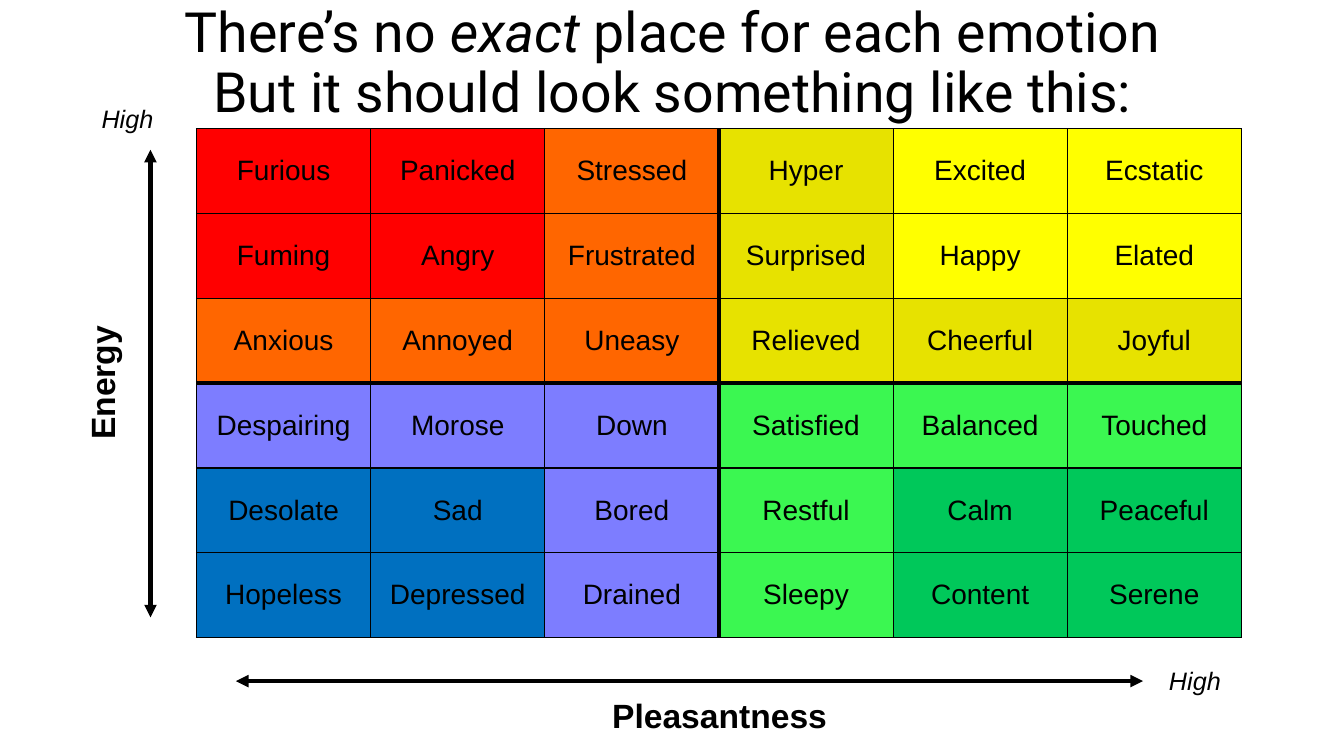
from lxml import etree
from pptx import Presentation
from pptx.dml.color import RGBColor
from pptx.enum.shapes import MSO_CONNECTOR
from pptx.enum.text import MSO_ANCHOR, MSO_AUTO_SIZE, PP_ALIGN
from pptx.oxml.ns import qn
from pptx.util import Pt

STRAIGHT = MSO_CONNECTOR.STRAIGHT
MIDDLE = MSO_ANCHOR.MIDDLE
NO_AUTOFIT = MSO_AUTO_SIZE.NONE
CENTER = PP_ALIGN.CENTER

BLACK = "000000"
EMOTIONS = [
    ["Furious", "Panicked", "Stressed", "Hyper", "Excited", "Ecstatic"],
    ["Fuming", "Angry", "Frustrated", "Surprised", "Happy", "Elated"],
    ["Anxious", "Annoyed", "Uneasy", "Relieved", "Cheerful", "Joyful"],
    ["Despairing", "Morose", "Down", "Satisfied", "Balanced", "Touched"],
    ["Desolate", "Sad", "Bored", "Restful", "Calm", "Peaceful"],
    ["Hopeless", "Depressed", "Drained", "Sleepy", "Content", "Serene"],
]
STRONG = [["FF0000", "FFFF00"], ["0070C0", "00C85A"]]
MILD = [["FF6600", "E7E200"], ["7D7DFF", "3BF751"]]
CENTRAL = (2, 3)


def color(value):
    return RGBColor.from_string(value)


def write(frame, text, size=20, font="Arial", bold=False, italic=False):
    paragraph = frame.paragraphs[0]
    paragraph.alignment = CENTER
    run = paragraph.add_run()
    run.text = text
    run.font.size = Pt(size)
    run.font.name = font
    run.font.bold = bold
    run.font.italic = italic
    run.font.color.rgb = color(BLACK)


prs = Presentation()
prs.slide_width, prs.slide_height = Pt(960), Pt(540)
slide = prs.slides.add_slide(prs.slide_layouts[5])

title = slide.shapes.title
title.left, title.top, title.width, title.height = Pt(29), Pt(0), Pt(903), Pt(92)
heading = title.text_frame
heading.auto_size = NO_AUTOFIT
heading.vertical_anchor = MIDDLE
heading.paragraphs[0].line_spacing = 0.9
for text, italic in [("There’s no ", False), ("exact", True), (" place for each emotion", False)]:
    write(heading, text, size=39.6, font="Roboto", italic=italic)
heading.paragraphs[0].add_line_break()
write(heading, "But it should look something like this:", size=39.6, font="Roboto")

mood_meter = slide.shapes.add_table(6, 6, Pt(140.4), Pt(92), Pt(746.4), Pt(363.6)).table
mood_meter.first_row = False
mood_meter.horz_banding = False
for column in mood_meter.columns:
    column.width = Pt(124.4)
for row in mood_meter.rows:
    row.height = Pt(60.6)

for r, emotions in enumerate(EMOTIONS):
    for c, emotion in enumerate(emotions):
        cell = mood_meter.cell(r, c)
        cell.margin_left = cell.margin_right = Pt(5)
        cell.margin_top = cell.margin_bottom = Pt(0)
        cell.vertical_anchor = MIDDLE
        write(cell.text_frame, emotion)
        properties = cell._tc.get_or_add_tcPr()
        for side, thick in [("L", c == 3), ("R", c == 2), ("T", r == 3), ("B", r == 2)]:
            border = etree.SubElement(properties, qn(f"a:ln{side}"), w=str(Pt(3 if thick else 1)))
            ink = etree.SubElement(border, qn("a:solidFill"))
            etree.SubElement(ink, qn("a:srgbClr"), val=BLACK)
        shades = MILD if r in CENTRAL or c in CENTRAL else STRONG
        cell.fill.solid()
        cell.fill.fore_color.rgb = color(shades[r // 3][c // 3])

for x1, y1, x2, y2 in [(107.5, 107, 107.5, 441), (168.5, 486.5, 816.5, 486.5)]:
    axis = slide.shapes.add_connector(STRAIGHT, Pt(x1), Pt(y1), Pt(x2), Pt(y2))
    axis.line.color.rgb = color(BLACK)
    axis.line.width = Pt(3)
    for end in ("headEnd", "tailEnd"):
        etree.SubElement(axis.line._get_or_add_ln(), qn(f"a:{end}"), type="triangle")
    etree.SubElement(axis._element.spPr, qn("a:effectLst"))

END_LABEL = {"size": 18, "italic": True}
AXIS_NAME = {"size": 24, "bold": True}
for text, left, top, width, height, rotation, style in [
    ("High", 57, 70.5, 68, 29, 0, END_LABEL),
    ("Energy", 11.5, 255.5, 122.5, 36, 270, AXIS_NAME),
    ("High", 819.5, 471.5, 68, 29, 0, END_LABEL),
    ("Pleasantness", 427, 492.5, 174, 36, 0, AXIS_NAME),
]:
    label = slide.shapes.add_textbox(Pt(left), Pt(top), Pt(width), Pt(height))
    label.rotation = rotation
    label.text_frame.word_wrap = True
    write(label.text_frame, text, **style)

prs.save("out.pptx")
